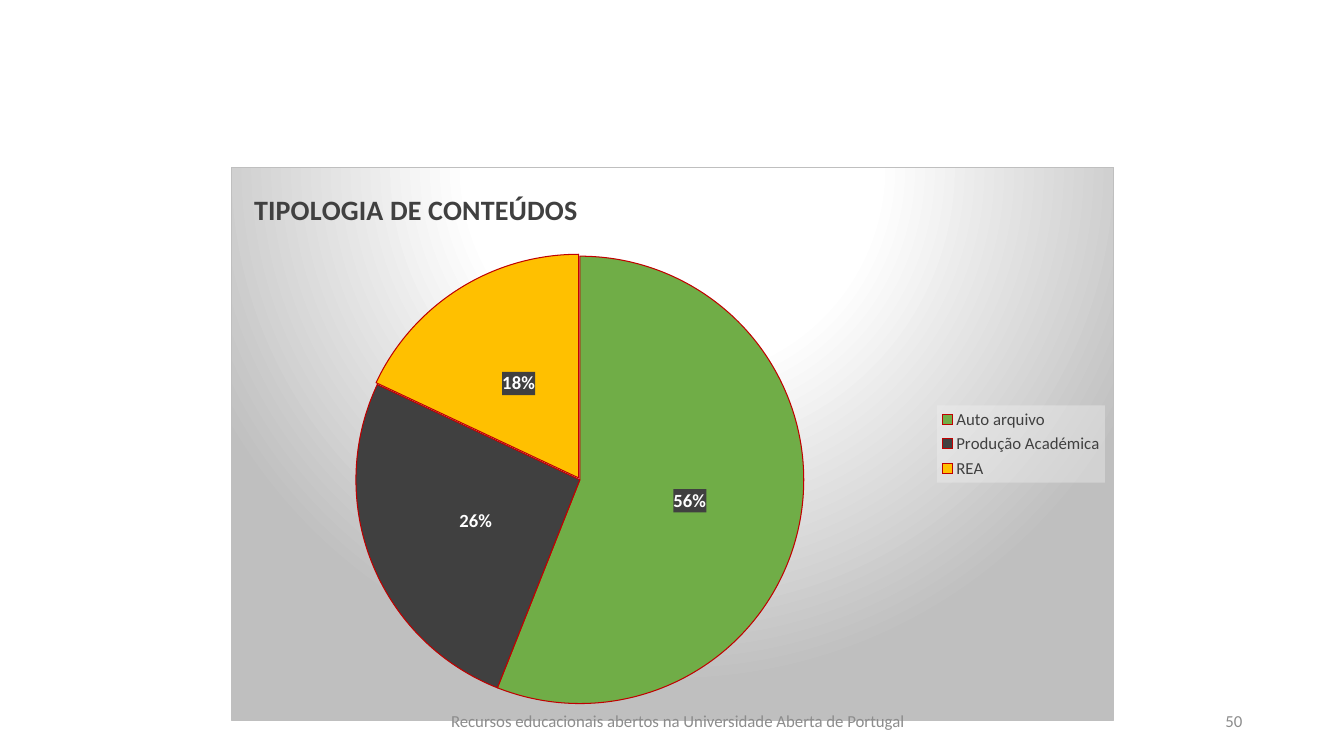
from pptx import Presentation
from pptx.chart.data import CategoryChartData
from pptx.dml.color import RGBColor
from pptx.enum.chart import XL_CHART_TYPE, XL_LABEL_POSITION, XL_LEGEND_POSITION
from pptx.enum.text import MSO_ANCHOR, PP_ALIGN
from pptx.oxml import parse_xml
from pptx.oxml.ns import nsdecls, qn
from pptx.util import Inches, Pt

PIE = XL_CHART_TYPE.PIE
CENTER, RIGHT = PP_ALIGN.CENTER, PP_ALIGN.RIGHT
MIDDLE = MSO_ANCHOR.MIDDLE
LABEL_MID = XL_LABEL_POSITION.CENTER
KEY_RIGHT = XL_LEGEND_POSITION.RIGHT

FONT = "Calibri"
GREEN = RGBColor(0x70, 0xAD, 0x47)
DARK = RGBColor(0x40, 0x40, 0x40)
GOLD = RGBColor(0xFF, 0xC0, 0x00)
RED = RGBColor(0xC0, 0x00, 0x00)
SILVER = RGBColor(0xBF, 0xBF, 0xBF)
GRAY = RGBColor(0x8C, 0x8C, 0x8C)
PALE = RGBColor(0xF2, 0xF2, 0xF2)
WHITE = RGBColor(0xFF, 0xFF, 0xFF)

SLICES = [
    ("Auto arquivo", 56, GREEN),
    ("Produção Académica", 26, DARK),
    ("REA", 18, GOLD),
]


def style(font, size, color, bold=False):
    font.name, font.size, font.bold = FONT, Pt(size), bold
    font.color.rgb = color


def add_text(slide, text, left, width, align):
    box = slide.shapes.add_textbox(Inches(left), Inches(6.95), Inches(width), Inches(0.4))
    frame = box.text_frame
    frame.word_wrap = True
    frame.vertical_anchor = MIDDLE
    para = frame.paragraphs[0]
    para.text, para.alignment = text, align
    style(para.font, 12, GRAY)


def place(item, index, inner=False, **spots):
    """Set a manual layout, in fractions of the chart, as child number index."""
    for old in item.findall(qn("c:layout")):
        item.remove(old)
    target = '<c:layoutTarget val="inner"/>' if inner else ""
    modes = "".join(f'<c:{key}Mode val="edge"/>' for key in "xy")
    sizes = "".join(f'<c:{key} val="{val}"/>' for key, val in spots.items())
    item.insert(index, parse_xml(
        f'<c:layout {nsdecls("c")}><c:manualLayout>{target}{modes}{sizes}'
        '</c:manualLayout></c:layout>'))


def shape_props(body):
    return parse_xml(f'<c:spPr {nsdecls("c", "a")}>{body}</c:spPr>')


def sheer(color, alpha):
    """Return a partly transparent fill; alpha is the opacity in percent."""
    return shape_props(f'<a:solidFill><a:srgbClr val="{color}">'
                       f'<a:alpha val="{alpha * 1000}"/></a:srgbClr></a:solidFill>')


def fill_back(space):
    stops = "".join(f'<a:gs pos="{pos * 1000}"><a:srgbClr val="{color}"/></a:gs>'
                    for pos, color in [(0, WHITE), (39, WHITE), (100, SILVER)])
    space.find(qn("c:chart")).addnext(shape_props(
        f'<a:gradFill><a:gsLst>{stops}</a:gsLst><a:path path="circle">'
        '<a:fillToRect l="50000" t="-80000" r="50000" b="180000"/></a:path></a:gradFill>'
        f'<a:ln w="{Pt(0.75)}"><a:solidFill><a:srgbClr val="{SILVER}"/></a:solidFill></a:ln>'))


def add_title(chart):
    chart.has_title = True
    title = chart.chart_title
    para = title.text_frame.paragraphs[0]
    para.text = "TIPOLOGIA DE CONTEÚDOS"
    style(para.font, 20, DARK, True)
    place(title.element if hasattr(title, "element") else title._element,
          1, x=0.02, y=0.03)


def add_legend(chart):
    chart.has_legend = True
    legend = chart.legend
    legend.position = KEY_RIGHT
    legend.include_in_layout = False
    style(legend.font, 12, DARK)
    item = chart.element.find(".//" + qn("c:legend"))
    place(item, 1, x=0.8, y=0.43, w=0.19, h=0.14)
    item.find(qn("c:overlay")).addnext(sheer(PALE, 39))


def paint_slices(chart):
    series = chart.plots[0].series[0]
    for num, (_, _, color) in enumerate(SLICES):
        look = series.points[num].format
        look.fill.solid()
        look.fill.fore_color.rgb = color
        look.line.color.rgb = RED
        look.line.width = Pt(0.75)
    last = chart.element.findall(".//" + qn("c:dPt"))[-1]
    last.find(qn("c:spPr")).addprevious(
        parse_xml(f'<c:explosion {nsdecls("c")} val="1"/>'))


def add_labels(chart):
    plot = chart.plots[0]
    plot.has_data_labels = True
    labels = plot.data_labels
    labels.show_percentage, labels.show_value = True, False
    labels.number_format, labels.number_format_is_linked = "0%", False
    labels.position = LABEL_MID
    style(labels.font, 13.3, WHITE, True)
    item = chart.element.find(".//" + qn("c:dLbls"))
    item.find(qn("c:txPr")).addprevious(sheer(DARK, 90))


def add_pie(slide):
    data = CategoryChartData()
    data.categories = [name for name, _, _ in SLICES]
    data.add_series("Series 1", [share for _, share, _ in SLICES])
    chart = slide.shapes.add_chart(
        PIE, Inches(2.29), Inches(1.66), Inches(8.76), Inches(5.49), data).chart
    style(chart.font, 10, RGBColor(0, 0, 0))
    chart.plots[0].vary_by_categories = True
    add_title(chart)
    add_legend(chart)
    paint_slices(chart)
    add_labels(chart)
    place(chart.element.find(".//" + qn("c:plotArea")), 0, inner=True,
          x=0.14, y=0.16, w=0.51, h=0.81)
    fill_back(chart.element)


def main():
    deck = Presentation()
    deck.slide_width, deck.slide_height = Inches(13.33), Inches(7.5)
    slide = deck.slides.add_slide(deck.slide_layouts[6])
    add_text(slide, "50", 9.42, 3, RIGHT)
    add_pie(slide)
    add_text(slide, "Recursos educacionais abertos na Universidade Aberta de Portugal",
             4.03, 5.39, CENTER)
    deck.save("out.pptx")


if __name__ == "__main__":
    main()
